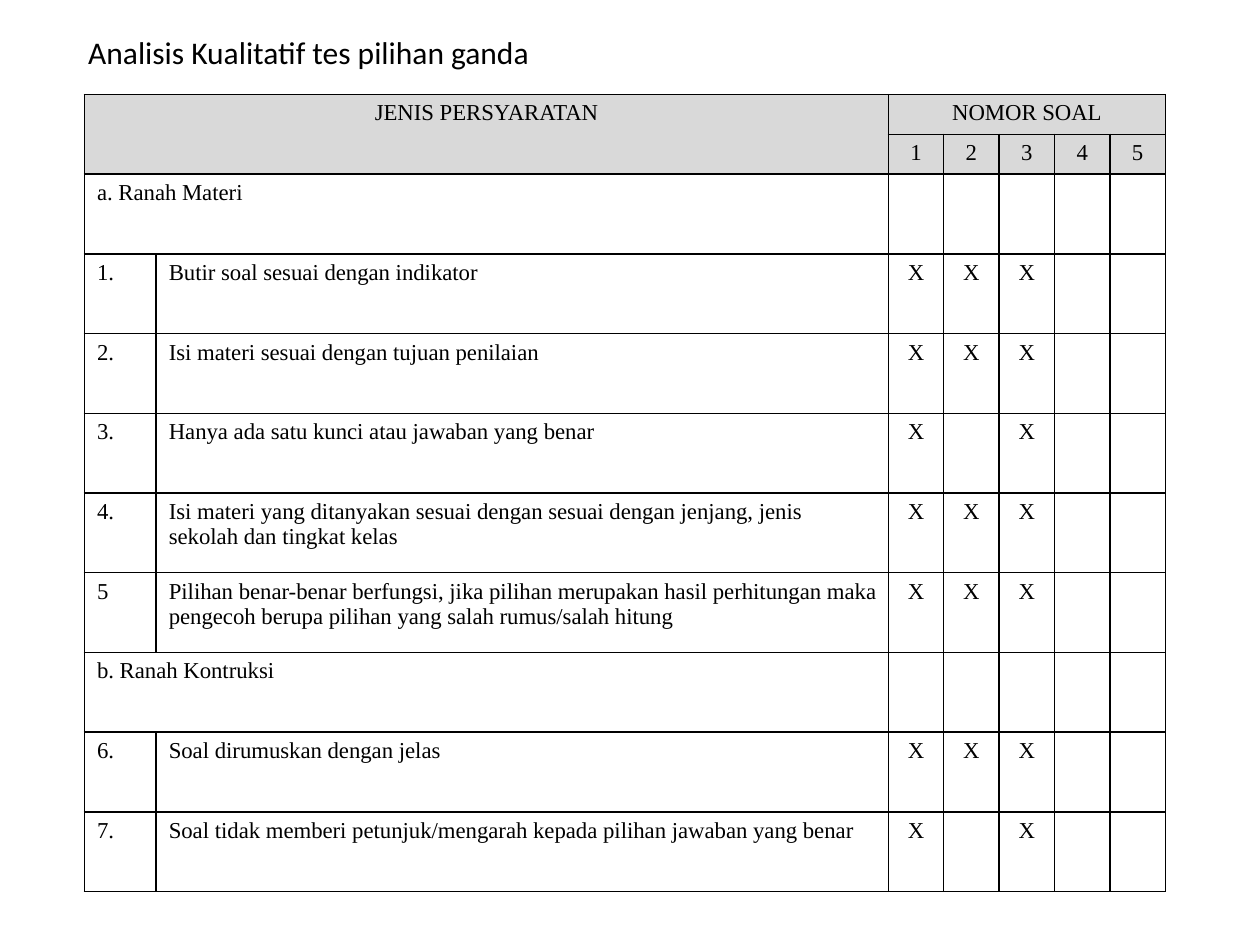
from lxml import etree
from pptx import Presentation
from pptx.dml.color import RGBColor
from pptx.enum.text import MSO_ANCHOR, PP_ALIGN
from pptx.oxml.ns import qn
from pptx.util import Inches, Pt

CENTER, LEFT, JUSTIFY = PP_ALIGN.CENTER, PP_ALIGN.LEFT, PP_ALIGN.JUSTIFY
MIDDLE = MSO_ANCHOR.MIDDLE
WIDE, HIGH = 10, 7.5

HEADS = [["JENIS PERSYARATAN", "", "NOMOR SOAL", "", "", "", ""],
         ["", "", "1", "2", "3", "4", "5"]]
# number, requirement, one mark per question
ITEMS = [
    ("a. Ranah Materi", "", ""),
    ("1.", "Butir soal sesuai dengan indikator", "XXX"),
    ("2.", "Isi materi sesuai dengan tujuan penilaian", "XXX"),
    ("3.", "Hanya ada satu kunci atau jawaban yang benar", "X X"),
    ("4.", "Isi materi yang ditanyakan sesuai dengan sesuai dengan jenjang, "
           "jenis sekolah dan tingkat kelas", "XXX"),
    ("5", "Pilihan benar-benar berfungsi, jika pilihan merupakan hasil "
          "perhitungan maka pengecoh berupa pilihan yang salah rumus/salah "
          "hitung", "XXX"),
    ("b. Ranah Kontruksi", "", ""),
    ("6.", "Soal dirumuskan dengan jelas", "XXX"),
    ("7.", "Soal tidak memberi petunjuk/mengarah kepada pilihan jawaban yang "
           "benar", "X X"),
]


def color(code):
    return RGBColor.from_string(code)


class Page:
    ink, shade = "000000", "D9D9D9"
    title_font, table_font = "Calibri", "Times New Roman"
    title_size, table_size = 18, 13

    def __init__(self, slide):
        self.slide = slide

    def add_text(self, para, text, font, size, align):
        para.alignment = align
        run = para.add_run()
        run.text = text
        run.font.name, run.font.size = font, Pt(size)
        run.font.color.rgb = color(self.ink)

    def title(self, text, left, top, width, height):
        """Place the title by shares of the slide's size."""
        shape = self.slide.shapes.title
        shape.left, shape.width = Inches(left * WIDE), Inches(width * WIDE)
        shape.top, shape.height = Inches(top * HIGH), Inches(height * HIGH)
        frame = shape.text_frame
        frame.word_wrap, frame.vertical_anchor = False, MIDDLE
        self.add_text(frame.paragraphs[0], text, self.title_font,
                      self.title_size, LEFT)

    def border(self, cell):
        props = cell._tc.get_or_add_tcPr()
        for side in ("a:lnL", "a:lnR", "a:lnT", "a:lnB"):
            line = etree.SubElement(props, qn(side), w=str(Pt(1)))
            fill = etree.SubElement(line, qn("a:solidFill"))
            etree.SubElement(fill, qn("a:srgbClr"), val=self.ink)

    def cell(self, cell, text, align, shade):
        self.border(cell)
        if shade:
            cell.fill.solid()
            cell.fill.fore_color.rgb = color(self.shade)
        else:
            cell.fill.background()
        para = cell.text_frame.paragraphs[0]
        if text:
            self.add_text(para, text, self.table_font, self.table_size, align)
        else:
            # an empty cell must not stretch its row
            end = para._p.get_or_add_endParaRPr()
            end.set("sz", str(self.table_size * 100))

    def table(self, rows, heads, left, top, cols, step):
        """Head rows are one step high, the others two."""
        highs = [step if r < heads else 2 * step for r in range(len(rows))]
        frame = self.slide.shapes.add_table(
            len(rows), len(cols), Inches(left * WIDE), Inches(top * HIGH),
            Inches(sum(cols)), Inches(sum(highs)))
        table = frame.table
        for col, width in zip(table.columns, cols):
            col.width = Inches(width)
        for row, high in zip(table.rows, highs):
            row.height = Inches(high)
        for r, row in enumerate(rows):
            for c, text in enumerate(row):
                align = CENTER if r < heads or c > 1 else JUSTIFY if c == 0 else LEFT
                self.cell(table.cell(r, c), text, align, r < heads)
            if r >= heads and not row[1]:
                table.cell(r, 0).merge(table.cell(r, 1))
        table.cell(0, 0).merge(table.cell(heads - 1, 1))
        table.cell(0, 2).merge(table.cell(0, len(cols) - 1))


def main():
    deck = Presentation()
    deck.slide_width, deck.slide_height = Inches(WIDE), Inches(HIGH)
    page = Page(deck.slides.add_slide(deck.slide_layouts[5]))
    page.title("Analisis Kualitatif tes pilihan ganda",
               0.06, 0.03, 0.4, 0.05)
    rows = HEADS + [[mark, text] + [m.strip() for m in marks.ljust(5)]
                    for mark, text, marks in ITEMS]
    page.table(rows, len(HEADS), 0.067, 0.1,
               [0.57, 5.81] + [0.44] * 5, 6.33 / 20)
    deck.save("out.pptx")


if __name__ == "__main__":
    main()
